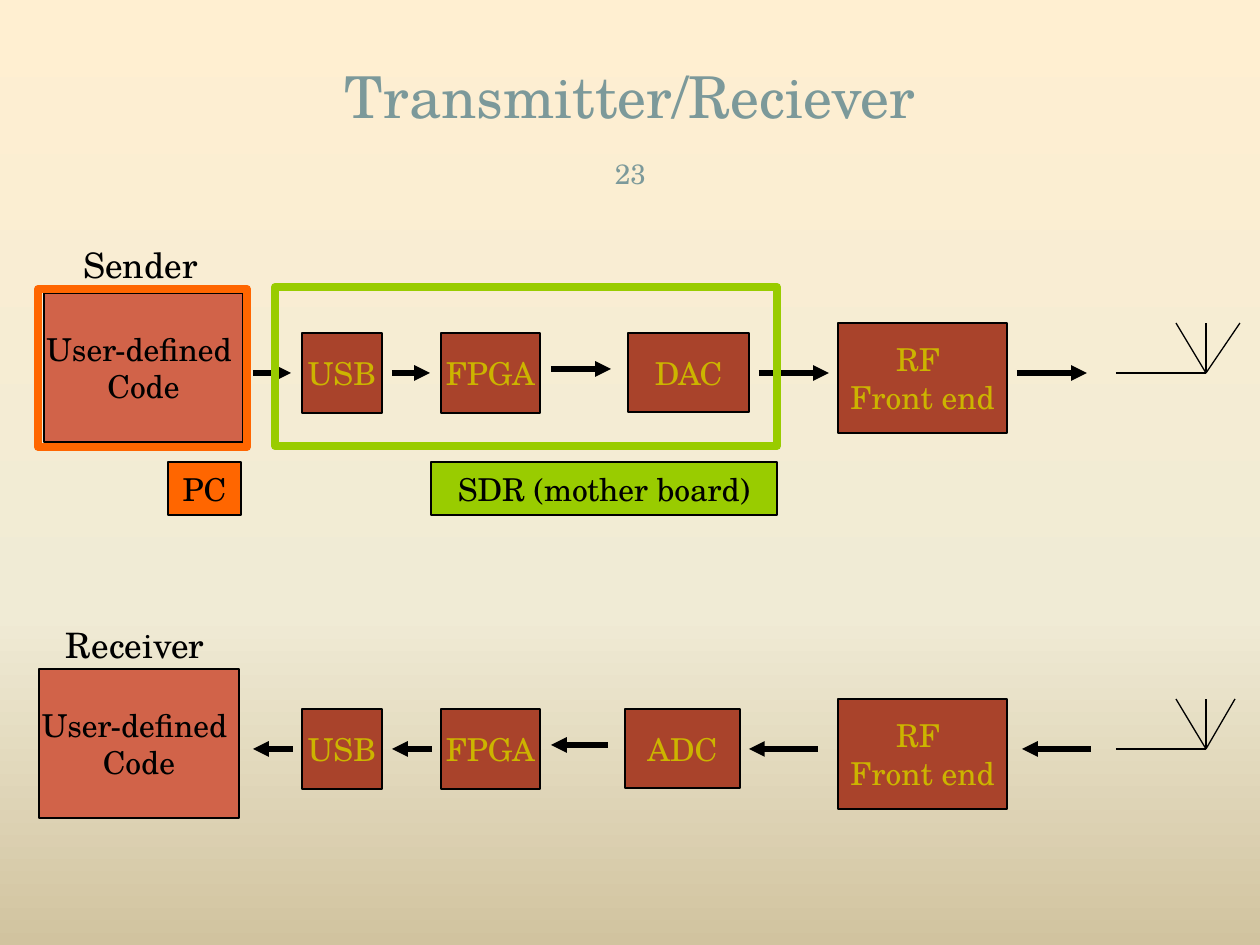
from copy import deepcopy
from dataclasses import dataclass

from lxml import etree
from pptx import Presentation
from pptx.dml.color import RGBColor
from pptx.enum.shapes import MSO_CONNECTOR, MSO_SHAPE
from pptx.enum.text import MSO_ANCHOR, PP_ALIGN
from pptx.oxml.ns import qn
from pptx.util import Emu, Pt

RECTANGLE = MSO_SHAPE.RECTANGLE
STRAIGHT = MSO_CONNECTOR.STRAIGHT
CENTER = PP_ALIGN.CENTER
MIDDLE, BOTTOM = MSO_ANCHOR.MIDDLE, MSO_ANCHOR.BOTTOM
EMU_PER_PX = 914400 / 126


@dataclass(frozen=True)
class Theme:
    font: str = "TeX Gyre Schola"
    heading: str = "7C999A"
    ink: str = "000000"
    code: str = "D16349"
    stage: str = "A9432B"
    stage_text: str = "CCB400"
    computer: str = "FF6600"
    board: str = "99CC00"
    backdrop: tuple = ((0, "FFEFD1"), (0.65, "F0EBD5"), (1, "D1C39F"))
    title_size: int = 33
    label_size: int = 20
    body_size: int = 18
    number_size: int = 16
    thin: float = 0.75
    arrow: float = 3
    frame: float = 4.5


def px(value):
    return Emu(round(value * EMU_PER_PX))


def color(code):
    return RGBColor.from_string(code)


class Diagram:
    def __init__(self, page, theme):
        self.page, self.theme = page, theme

    def background(self):
        fill = self.page.background.fill
        fill.gradient()
        fill.gradient_angle = 270
        stop_list = self.page.element.find(".//" + qn("a:gsLst"))
        stop_list.insert(1, deepcopy(stop_list[0]))
        for stop, (position, code) in zip(fill.gradient_stops, self.theme.backdrop):
            stop.position = position
            stop.color.rgb = color(code)

    def set_text(self, box, lines, size, code, anchor=MIDDLE, wrap=False):
        frame = box.text_frame
        frame.word_wrap = wrap
        frame.vertical_anchor = anchor
        for index, line in enumerate(lines):
            para = frame.add_paragraph() if index else frame.paragraphs[0]
            para.alignment = CENTER
            span = para.add_run()
            span.text = line
            span.font.name = self.theme.font
            span.font.size = Pt(size)
            span.font.color.rgb = color(code)

    def title(self, text, *place):
        box = self.page.shapes.title
        box.left, box.top, box.width, box.height = map(px, place)
        self.set_text(box, [text], self.theme.title_size, self.theme.heading, BOTTOM, True)

    def label(self, text, place, size, code):
        box = self.page.shapes.add_textbox(*map(px, place))
        self.set_text(box, [text], size, code)

    def rectangle(self, place):
        box = self.page.shapes.add_shape(RECTANGLE, *map(px, place))
        box.shadow.inherit = False
        return box

    def block(self, lines, place, fill, code):
        box = self.rectangle(place)
        box.fill.solid()
        box.fill.fore_color.rgb = color(fill)
        box.line.color.rgb = color(self.theme.ink)
        box.line.width = Pt(self.theme.thin)
        self.set_text(box, lines, self.theme.body_size, code)

    def stage(self, lines, *place):
        self.block(lines, place, self.theme.stage, self.theme.stage_text)

    def frame(self, place, code):
        box = self.rectangle(place)
        box.fill.background()
        box.line.color.rgb = color(code)
        box.line.width = Pt(self.theme.frame)

    def line(self, x1, y1, x2, y2, width):
        line = self.page.shapes.add_connector(STRAIGHT, *map(px, (x1, y1, x2, y2)))
        line.line.color.rgb = color(self.theme.ink)
        line.line.width = Pt(width)
        etree.SubElement(line.element.spPr, qn("a:effectLst"))
        return line

    def arrow(self, start, end, y):
        line = self.line(start, y, end, y, self.theme.arrow)
        outline = line.element.spPr.find(qn("a:ln"))
        etree.SubElement(outline, qn("a:tailEnd"), type="triangle")

    def antenna(self, y, right):
        foot = 1206
        self.line(1116, y, foot, y, self.theme.thin)
        for tip in (foot, 1176, right):
            self.line(foot, y, tip, y - 50, self.theme.thin)

    def chain(self, axis, code_place, converter, converter_x, converter_width,
              arrows, antenna_right):
        """One signal chain, centred on the height of its axis."""
        self.block(["User-defined ", "Code"], code_place, self.theme.code, self.theme.ink)
        self.stage(["USB"], 302, axis - 40, 80, 80)
        self.stage(["FPGA"], 441, axis - 40, 99, 80)
        self.stage([converter], converter_x, axis - 40, converter_width, 79)
        self.stage(["RF ", "Front end"], 838, axis - 50, 169, 110)
        for start, end, rise in arrows:
            self.arrow(start, end, axis - rise)
        self.antenna(axis, antenna_right)


def main():
    theme = Theme()
    deck = Presentation()
    deck.slide_width, deck.slide_height = px(1260), px(945)
    page = deck.slides.add_slide(deck.slide_layouts[5])
    diagram = Diagram(page, theme)

    # Background, title and page number
    diagram.background()
    diagram.title("Transmitter/Reciever", 42, 31, 1176, 105)
    diagram.label("23", (599, 143, 63, 60), theme.number_size, theme.heading)

    # Sender: arrows run from the code to the antenna
    diagram.label("Sender", (63, 235, 155, 59), theme.label_size, theme.ink)
    diagram.chain(373, (44, 293, 199, 149), "DAC", 628, 121,
                  [(253, 291, 0), (392, 430, 0), (551, 611, 4),
                   (759, 829, 0), (1017, 1087, 0)], 1240)

    # Receiver: arrows run back from the antenna
    diagram.label("Receiver", (31, 620, 208, 49), theme.label_size, theme.ink)
    diagram.chain(749, (39, 669, 200, 149), "ADC", 625, 115,
                  [(293, 253, 0), (432, 392, 0), (608, 551, 4),
                   (818, 749, 0), (1091, 1022, 0)], 1235)

    # Hardware frames and their captions
    diagram.frame((38, 289, 209, 158), theme.computer)
    diagram.frame((275, 287, 502, 159), theme.board)
    diagram.block(["SDR (mother board)"], (431, 462, 346, 53), theme.board, theme.ink)
    diagram.block(["PC"], (168, 462, 73, 53), theme.computer, theme.ink)

    deck.save("out.pptx")


if __name__ == "__main__":
    main()
